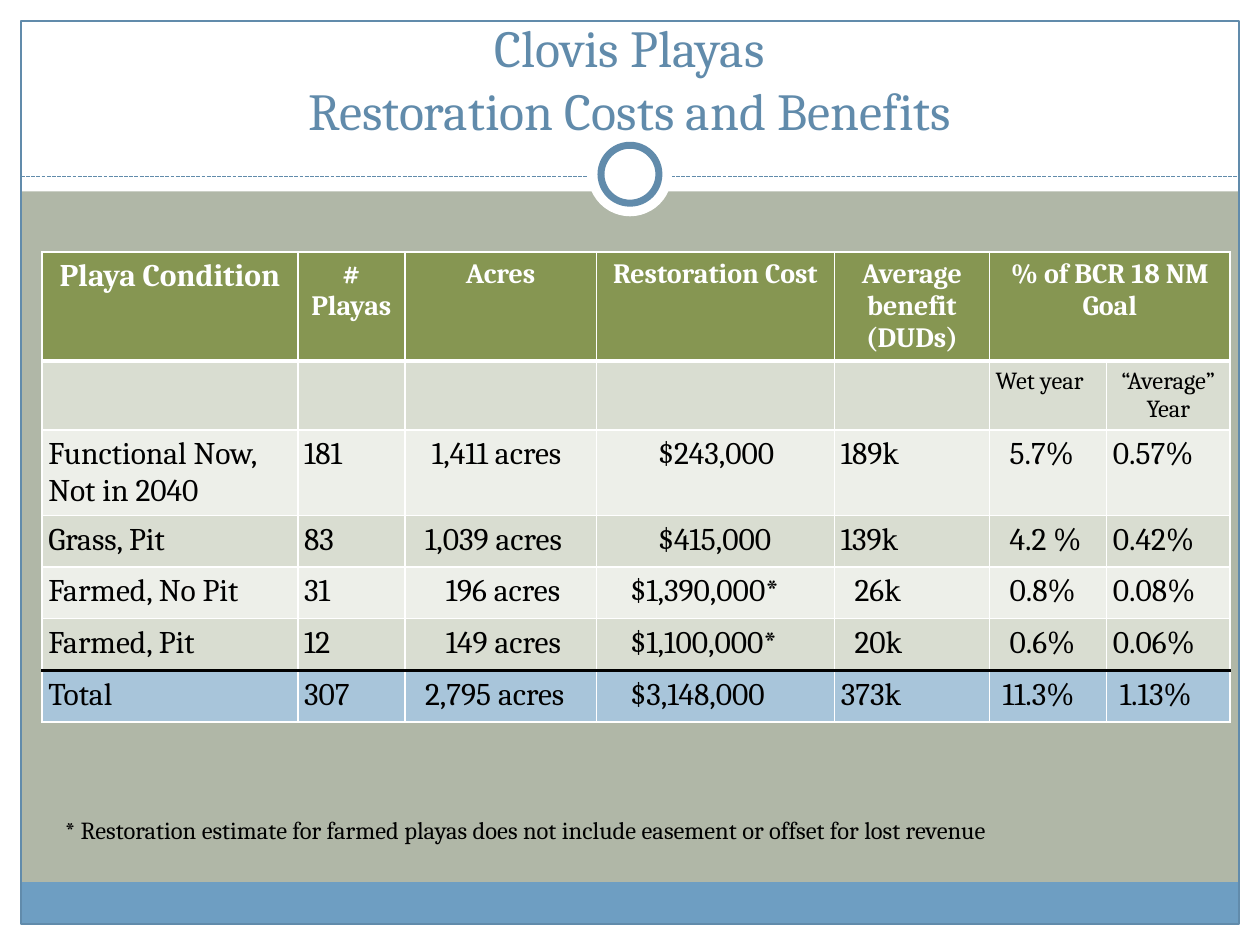
import pptx
import pptx.util
import pptx.dml.color
import pptx.enum.dml
import pptx.enum.shapes
import pptx.enum.text
import pptx.oxml.ns
from lxml import etree

COLORS = {
    "sage": "B0B7A7", "white": "FFFFFF", "black": "000000",
    "bar": "6E9EC2", "blue": "618BAB", "olive": "869652",
    "dark band": "D9DDD1", "light band": "EDEFE9", "total": "A8C5DA",
}
RGB = {k: pptx.dml.color.RGBColor.from_string(v) for k, v in COLORS.items()}
FONT = "Cambria"
Pt, Inches = pptx.util.Pt, pptx.util.Inches
SHAPE = pptx.enum.shapes.MSO_SHAPE
ALIGN = pptx.enum.text.PP_ALIGN
qn = pptx.oxml.ns.qn

prs = pptx.Presentation()
prs.slide_width, prs.slide_height = Inches(10), Inches(7.5)
UNIT = prs.slide_width / 60  # grid of 60 columns by 45 rows


def grid(*cells):
    return [round(c * UNIT) for c in cells]


def add_run(p, text, size, color, bold=False):
    r = p.add_run()
    r.text = text
    r.font.name, r.font.size, r.font.bold = FONT, Pt(size), bold
    r.font.color.rgb = RGB[color]


s = prs.slides.add_slide(prs.slide_layouts[5])
s.background.fill.solid()
s.background.fill.fore_color.rgb = RGB["sage"]

# Frame: white margins and header, blue footer bar, outline
for box, fill in [
    ((0, 44, 60, 1), "white"),
    ((0, 0, 60, 9.12), "white"),
    ((0, 0, 1, 45), "white"),
    ((59, 0, 1, 45), "white"),
    ((1, 42, 58, 2), "bar"),
    ((1, 1, 58, 43), None),
]:
    sp = s.shapes.add_shape(SHAPE.RECTANGLE, *grid(*box))
    sp.shadow.inherit = False
    if fill:
        sp.fill.solid()
        sp.fill.fore_color.rgb = RGB[fill]
        sp.line.fill.background()
    else:
        sp.fill.background()
        sp.line.color.rgb = RGB["blue"]
        sp.line.width = Pt(0.75)

# Dashed rule under the title
rule = s.shapes.add_connector(
    pptx.enum.shapes.MSO_CONNECTOR.STRAIGHT, *grid(1, 8.4, 59, 8.4))
rule.line.color.rgb = RGB["blue"]
rule.line.width = Pt(0.75)
rule.line.dash_style = pptx.enum.dml.MSO_LINE.SQUARE_DOT
etree.SubElement(rule._element.spPr, qn("a:effectLst"))

# Ring on the rule
for left, top, size, ring in [(28, 6.3, 4, False), (28.62, 6.92, 2.76, True)]:
    sp = s.shapes.add_shape(SHAPE.OVAL, *grid(left, top, size, size))
    sp.shadow.inherit = False
    sp.fill.solid()
    sp.fill.fore_color.rgb = RGB["white"]
    if ring:
        sp.line.color.rgb = RGB["blue"]
        sp.line.width = Pt(4)
    else:
        sp.line.fill.background()

# Title, brought in front of the frame
title = s.shapes.title
s.shapes._spTree.append(title._element)
title.left, title.top, title.width, title.height = grid(2, 2, 56, 5)
tf = title.text_frame
tf.auto_size = pptx.enum.text.MSO_AUTO_SIZE.NONE
tf.vertical_anchor = pptx.enum.text.MSO_ANCHOR.BOTTOM
p = tf.paragraphs[0]
p.alignment = ALIGN.CENTER
add_run(p, "Clovis Playas", 29.7, "blue")
p.add_line_break()
add_run(p, "Restoration Costs and Benefits", 29.7, "blue")

# Table contents; the indents count steps from the left of each cell
rows = [
    ["Playa Condition", "# Playas", "Acres", "Restoration Cost",
     "Average\nbenefit (DUDs)", "% of BCR 18 NM Goal", ""],
    ["", "", "", "", "", "Wet year", "“Average” Year"],
    ["Functional Now, Not in 2040", "181", "1,411 acres", "$243,000",
     "189k", "5.7%", "0.57%"],
    ["Grass, Pit", "83", "1,039 acres", "$415,000", "139k", "4.2 %", "0.42%"],
    ["Farmed, No Pit", "31", "196 acres", "$1,390,000*", "26k", "0.8%", "0.08%"],
    ["Farmed, Pit", "12", "149 acres", "$1,100,000*", "20k", "0.6%", "0.06%"],
    ["Total", "307", "2,795 acres", "$3,148,000", "373k", "11.3%", "1.13%"],
]
no_indent = [0] * 7
indents = [
    no_indent, no_indent,
    [0, 0, 3, 8, 0, 2, 0],
    [0, 0, 2, 8, 0, 2, 0],
    [0, 0, 5, 4, 2, 2, 0],
    [0, 0, 5, 4, 2, 2, 0],
    [0, 0, 2, 4, 0, 1, 1],
]
fills = ["olive"] + ["dark band", "light band"] * 2 + ["dark band", "total"]
widths = [2.03, 0.85, 1.52, 1.89, 1.23, 0.93, 0.98]
INSET, STEP, ROW_HEIGHT = 0.05, 0.055, 0.41
last = len(rows) - 1

left, top = grid(2, 12)
table = s.shapes.add_table(
    len(rows), len(widths), left, top,
    Inches(sum(widths)), Inches(ROW_HEIGHT * len(rows))).table
for column, width in zip(table.columns, widths):
    column.width = Inches(width)
for row in table.rows:
    row.height = Inches(ROW_HEIGHT)
table.cell(0, 5).merge(table.cell(0, 6))

for i, row in enumerate(rows):
    # Heavy white rule under the header, black rule above the total
    borders = {side: ("white", 1) for side in ("lnL", "lnR", "lnT", "lnB")}
    if i == 0:
        borders["lnB"] = ("white", 3)
    elif i == 1:
        borders["lnT"] = ("white", 3)
    elif i == last - 1:
        borders["lnB"] = ("black", 2.25)
    elif i == last:
        borders["lnT"] = ("black", 2.25)

    for j, text in enumerate(row):
        cell = table.cell(i, j)
        cell.margin_left = Inches(INSET + STEP * indents[i][j])
        cell.margin_right = cell.margin_top = cell.margin_bottom = Inches(INSET)
        tcPr = cell._tc.get_or_add_tcPr()
        for side, (color, width) in borders.items():
            ln = etree.SubElement(tcPr, qn("a:" + side), w=str(Pt(width)))
            solid = etree.SubElement(ln, qn("a:solidFill"))
            etree.SubElement(solid, qn("a:srgbClr"), val=COLORS[color])
        cell.fill.solid()
        cell.fill.fore_color.rgb = RGB[fills[i]]
        if not text:
            continue
        size = {0: 18 if j == 0 else 16, 1: 14}.get(i, 18)
        tf = cell.text_frame
        for k, line in enumerate(text.split("\n")):
            p = tf.add_paragraph() if k else tf.paragraphs[0]
            centred = i == 0 or (i, j) == (1, 6)
            p.alignment = ALIGN.CENTER if centred else ALIGN.LEFT
            add_run(p, line, size, "black" if i else "white", bold=i == 0)

# Footnote
note = s.shapes.add_textbox(*grid(2.5, 38.5, 55.5, 2.04))
tf = note.text_frame
tf.word_wrap = True
add_run(tf.paragraphs[0],
        "* Restoration estimate for farmed playas does not include "
        "easement or offset for lost revenue", 14, "black")

prs.save("out.pptx")
